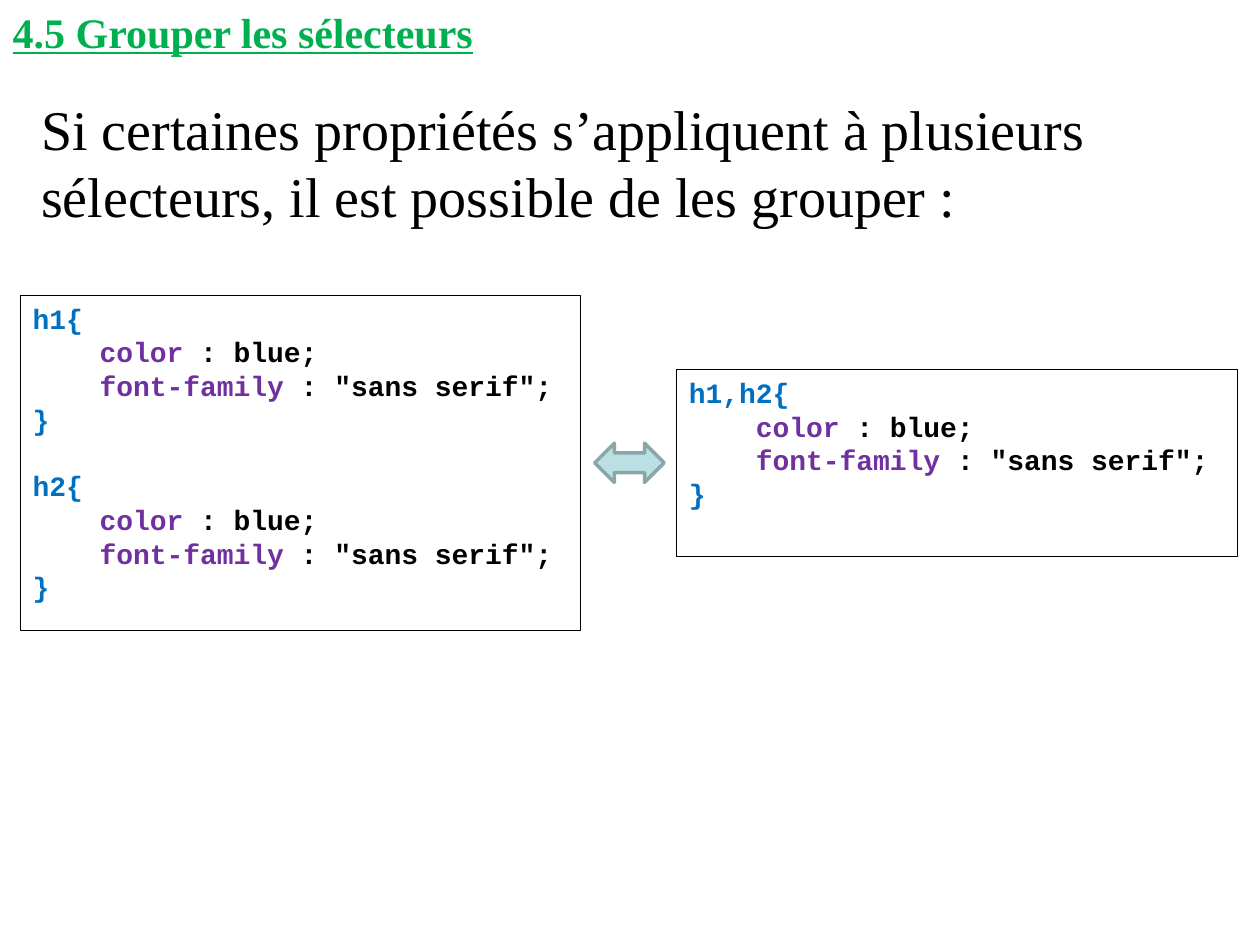
from pptx import Presentation
from pptx.dml.color import RGBColor
from pptx.enum import shapes, text
from pptx.util import Cm, Pt

BLACK = RGBColor(0x00, 0x00, 0x00)
WHITE = RGBColor(0xFF, 0xFF, 0xFF)
GREEN = RGBColor(0x00, 0xB0, 0x50)
BLUE = RGBColor(0x00, 0x70, 0xC0)
PURPLE = RGBColor(0x70, 0x30, 0xA0)
AQUA = RGBColor(0xBB, 0xE0, 0xE3)
GREY = RGBColor(0x8A, 0xA6, 0xA8)

SERIF = "Times New Roman"
MONO = "Courier New"
MIDDLE = 9.33  # shared centre line of both code boxes and the arrow, in cm
BODY = [("color", "blue"), ("font-family", '"sans serif"')]


def add_run(para, words, font, size, color, bold=False):
    run = para.add_run()
    run.text = words
    run.font.name = font
    run.font.size = Pt(size)
    run.font.color.rgb = color
    run.font.bold = bold
    return run


def set_frame(frame):
    frame.word_wrap = True
    frame.auto_size = text.MSO_AUTO_SIZE.NONE
    frame.vertical_anchor = text.MSO_ANCHOR.TOP


def add_title(slide, words):
    title = slide.shapes.title
    title.left, title.top = Cm(0), Cm(0)
    title.width, title.height = Cm(22.81), Cm(1.27)
    set_frame(title.text_frame)
    para = title.text_frame.paragraphs[0]
    para.alignment = text.PP_ALIGN.LEFT
    add_run(para, words, SERIF, 24, GREEN, True).font.underline = True


def add_intro(slide, words):
    box = slide.shapes.add_textbox(Cm(0.58), Cm(1.78), Cm(24.41), Cm(2.95))
    set_frame(box.text_frame)
    add_run(box.text_frame.paragraphs[0], words, SERIF, 32, BLACK)


def add_shape(slide, kind, left, width, height, fill, line, weight):
    """Add a preset shape centred on the middle line."""
    shape = slide.shapes.add_shape(
        kind, Cm(left), Cm(MIDDLE - height / 2), Cm(width), Cm(height))
    shape.shadow.inherit = False
    shape.fill.solid()
    shape.fill.fore_color.rgb = fill
    shape.line.color.rgb = line
    shape.line.width = Pt(weight)
    return shape


def add_line(frame, parts, indent=0):
    """Add one line of code from (words, colour) parts."""
    first = frame.paragraphs[0]
    para = frame.add_paragraph() if first.runs else first
    para.alignment = text.PP_ALIGN.LEFT
    props = para._p.get_or_add_pPr()
    props.set("marL", str(Cm(indent)))
    props.set("indent", "0")
    for words, color in parts:
        add_run(para, words, MONO, 16, color, True)
    return para


def add_code(slide, left, height, names):
    """Add a box with one CSS rule for each selector name."""
    box = add_shape(slide, shapes.MSO_SHAPE.RECTANGLE, left, 11.3, height,
                    WHITE, BLACK, 0.5)
    frame = box.text_frame
    set_frame(frame)
    for i, name in enumerate(names):
        head = add_line(frame, [(name + "{", BLUE)])
        if i:
            head.space_before = Pt(19)
        for key, value in BODY:
            add_line(frame, [(key, PURPLE), (f" : {value};", BLACK)], 1.35)
        add_line(frame, [("}", BLUE)])


def main():
    deck = Presentation()
    deck.slide_width, deck.slide_height = Cm(25.4), Cm(19.05)
    slide = deck.slides.add_slide(deck.slide_layouts[5])
    add_title(slide, "4.5 Grouper les sélecteurs")
    add_code(slide, 0.41, 6.76, ["h1", "h2"])
    add_code(slide, 13.64, 3.76, ["h1,h2"])
    add_shape(slide, shapes.MSO_SHAPE.LEFT_RIGHT_ARROW, 11.99, 1.4, 0.79,
              AQUA, GREY, 2)
    add_intro(slide, "Si certaines propriétés s’appliquent à plusieurs "
                     "sélecteurs, il est possible de les grouper :")
    deck.save("out.pptx")


if __name__ == "__main__":
    main()
